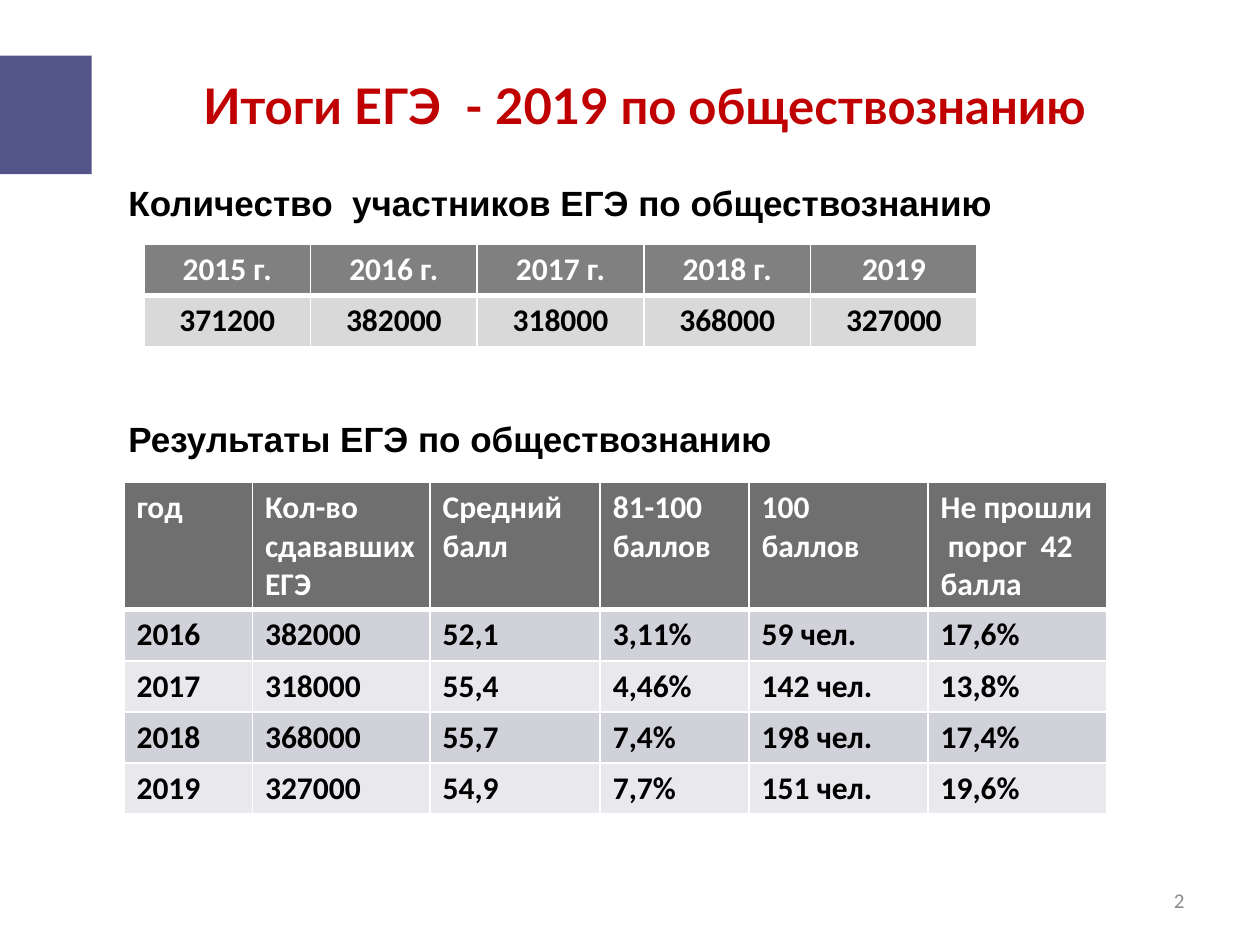
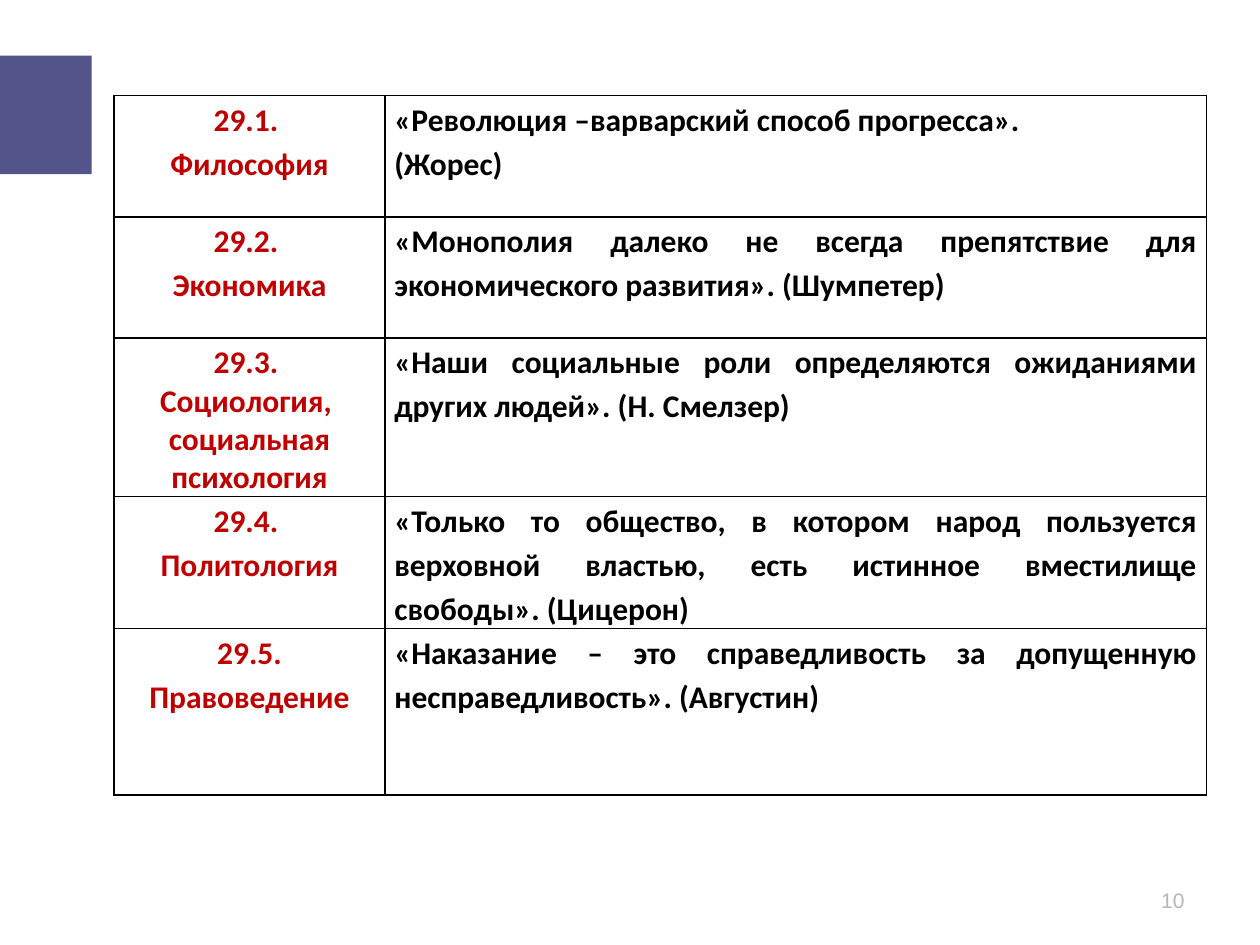
from lxml import etree
from pptx import Presentation
from pptx import util as u
from pptx.dml.color import RGBColor
from pptx.enum import shapes, text
from pptx.oxml.ns import qn

AL = text.PP_ALIGN
RED, BLACK, WHITE, VIOLET = "C00000", "000000", "FFFFFF", "53548A"
HEADER = dict(size=18, name="Calibri", bold=True, color=WHITE)
BODY = dict(HEADER, color=BLACK)
TOPIC = dict(HEADER, color=RED)
TITLE = dict(size=28, name="Lato", bold=True, color=RED)
HEADING = dict(size=20, name="Arial", bold=True, color=BLACK)

COUNTS = [
    ["2015 г.", "2016 г.", "2017 г.", "2018 г.", "2019"],
    ["371200", "382000", "318000", "368000", "327000"],
]
RESULTS = [
    ["год", "Кол-во сдававших ЕГЭ", "Средний балл", "81-100\nбаллов",
     "100\nбаллов", "Не прошли  порог  42 балла"],
    ["2016", "382000", "52,1", "3,11%", "59 чел.", "17,6%"],
    ["2017", "318000", "55,4", "4,46%", "142 чел.", "13,8%"],
    ["2018", "368000", "55,7", "7,4%", "198 чел.", "17,4%"],
    ["2019", "327000", "54,9", "7,7%", "151 чел.", "19,6%"],
]
QUOTES = [
    ["29.1. \nФилософия",
     "«Революция –варварский способ прогресса». \n(Жорес)"],
    ["29.2. \nЭкономика",
     "«Монополия далеко не всегда препятствие для экономического развития». (Шумпетер)"],
    ["29.3. \nСоциология, \nсоциальная психология",
     "«Наши социальные роли определяются ожиданиями других людей». (Н. Смелзер)"],
    ["29.4. \nПолитология",
     "«Только то общество, в котором народ пользуется верховной властью, "
     "есть истинное вместилище свободы». (Цицерон)"],
    ["29.5. Правоведение",
     "«Наказание – это справедливость за допущенную несправедливость». (Августин)"],
]


def rgb(code):
    """Turn a hex string into a colour."""
    return RGBColor.from_string(code)


def cm(*values):
    """Turn numbers into centimetre lengths."""
    return [u.Cm(v) for v in values]


def write(tf, content, fmt, align, spacing=1.0):
    """Fill a text frame with one formatted paragraph per line."""
    tf.word_wrap = True
    for i, line in enumerate(content.split("\n")):
        p = tf.paragraphs[0] if i == 0 else tf.add_paragraph()
        p.alignment, p.line_spacing = align, spacing
        r = p.add_run()
        r.text = line
        for key, value in fmt.items():
            if key == "color":
                r.font.color.rgb = rgb(value)
            else:
                setattr(r.font, key, u.Pt(value) if key == "size" else value)


def set_borders(cell, color, top=1, bottom=1):
    """Draw the four cell borders with widths in points."""
    tc_pr = cell._tc.get_or_add_tcPr()
    widths = dict(lnL=1, lnR=1, lnT=top, lnB=bottom)
    for i, (side, width) in enumerate(widths.items()):
        ln = etree.Element(qn("a:" + side), w=str(u.Pt(width)))
        fill = etree.SubElement(ln, qn("a:solidFill"))
        etree.SubElement(fill, qn("a:srgbClr"), val=color)
        tc_pr.insert(i, ln)


def add_grid(s, box, rows, widths, heights):
    """Add an unstyled table at a left-top corner and return it."""
    frame = s.shapes.add_table(len(rows), len(widths), *cm(*box, sum(widths), sum(heights)))
    tbl = frame.table
    tbl.first_row = tbl.horz_banding = False
    for col, width in zip(tbl.columns, widths):
        col.width = u.Cm(width)
    for row, height in zip(tbl.rows, heights):
        row.height = u.Cm(height)
    return tbl


def add_data_table(s, box, rows, widths, heights, head_fill, bands, align):
    """Add a table with a dark header, banded rows and white rules."""
    tbl = add_grid(s, box, rows, widths, heights)
    for i, row in enumerate(rows):
        for j, content in enumerate(row):
            cell = tbl.cell(i, j)
            cell.fill.solid()
            cell.fill.fore_color.rgb = rgb(bands[(i - 1) % len(bands)] if i else head_fill)
            set_borders(cell, WHITE, 3 if i == 1 else 1, 3 if i == 0 else 1)
            write(cell.text_frame, content, BODY if i else HEADER, align)


def add_quote_table(s, box, rows, widths, heights):
    """Add a ruled table of topics and quotations."""
    tbl = add_grid(s, box, rows, widths, heights)
    styles = [(TOPIC, AL.CENTER), (BODY, AL.JUSTIFY)]
    for i, row in enumerate(rows):
        for j, (content, style) in enumerate(zip(row, styles)):
            cell = tbl.cell(i, j)
            cell.fill.background()
            cell.margin_left = cell.margin_right = u.Cm(0.19)
            cell.margin_top = cell.margin_bottom = 0
            set_borders(cell, BLACK)
            write(cell.text_frame, content, *style, spacing=1.15)
            for p in cell.text_frame.paragraphs[1:]:
                if len(cell.text_frame.paragraphs) > 2:
                    p.line_spacing = 1.0


def add_frame(s, number, font, color):
    """Add the side band and the page number."""
    sp = s.shapes.add_shape(shapes.MSO_SHAPE.RECTANGLE, *cm(0, 1.12, 1.85, 2.39))
    sp.shadow.inherit = False
    sp.fill.solid()
    sp.fill.fore_color.rgb = rgb(VIOLET)
    sp.line.fill.background()
    tf = s.shapes.add_textbox(*cm(18.2, 17.65, 5.93, 1.01)).text_frame
    tf.vertical_anchor = text.MSO_ANCHOR.MIDDLE
    write(tf, number, dict(size=12, name=font, color=color), AL.RIGHT)


def add_title(s, box, content):
    """Place and format the title placeholder."""
    sp = s.shapes.title
    sp.left, sp.top, sp.width, sp.height = cm(*box)
    sp.text_frame.vertical_anchor = text.MSO_ANCHOR.MIDDLE
    write(sp.text_frame, content, TITLE, AL.CENTER)


def add_headings(s, box, content, gap):
    """Add the table headings, separated by a gap in points."""
    tf = s.shapes.add_textbox(*cm(*box)).text_frame
    write(tf, content, HEADING, AL.JUSTIFY)
    for p in tf.paragraphs[1:]:
        p.space_before = u.Pt(gap)


def build_results(prs):
    """Build the slide with exam results."""
    s = prs.slides.add_slide(prs.slide_layouts[5])
    add_title(s, (1.85, 1.12, 22.28, 2), "Итоги ЕГЭ  - 2019 по обществознанию")
    add_headings(s, (2.34, 3.53, 20.57, 13.41),
                 "Количество  участников ЕГЭ по обществознанию\n"
                 "Результаты ЕГЭ по обществознанию", 111)
    add_data_table(s, (2.9, 4.93), COUNTS, [3.36] * 5, [1.03] * 2,
                   "808080", ["D9D9D9"], AL.CENTER)
    add_data_table(s, (2.5, 9.73), RESULTS, [2.59, 3.58, 3.43, 3, 3.61, 3.61],
                   [2.56] + [1.03] * 4, "6F6F6F", ["D1D1DA", "E9E9ED"], AL.LEFT)
    add_frame(s, "2", "Calibri", "8C8C8C")


def build_quotes(prs):
    """Build the slide with essay quotations."""
    s = prs.slides.add_slide(prs.slide_layouts[6])
    add_quote_table(s, (2.3, 1.93), QUOTES, [5.46, 16.56], [2.44, 2.44, 3.2, 2.66, 3.36])
    add_frame(s, "10", "Arial", "B6B6B6")


def main():
    """Build and save the presentation."""
    prs = Presentation()
    prs.slide_width, prs.slide_height = cm(25.4, 19.05)
    build_results(prs)
    build_quotes(prs)
    prs.save("out.pptx")


if __name__ == "__main__":
    main()
